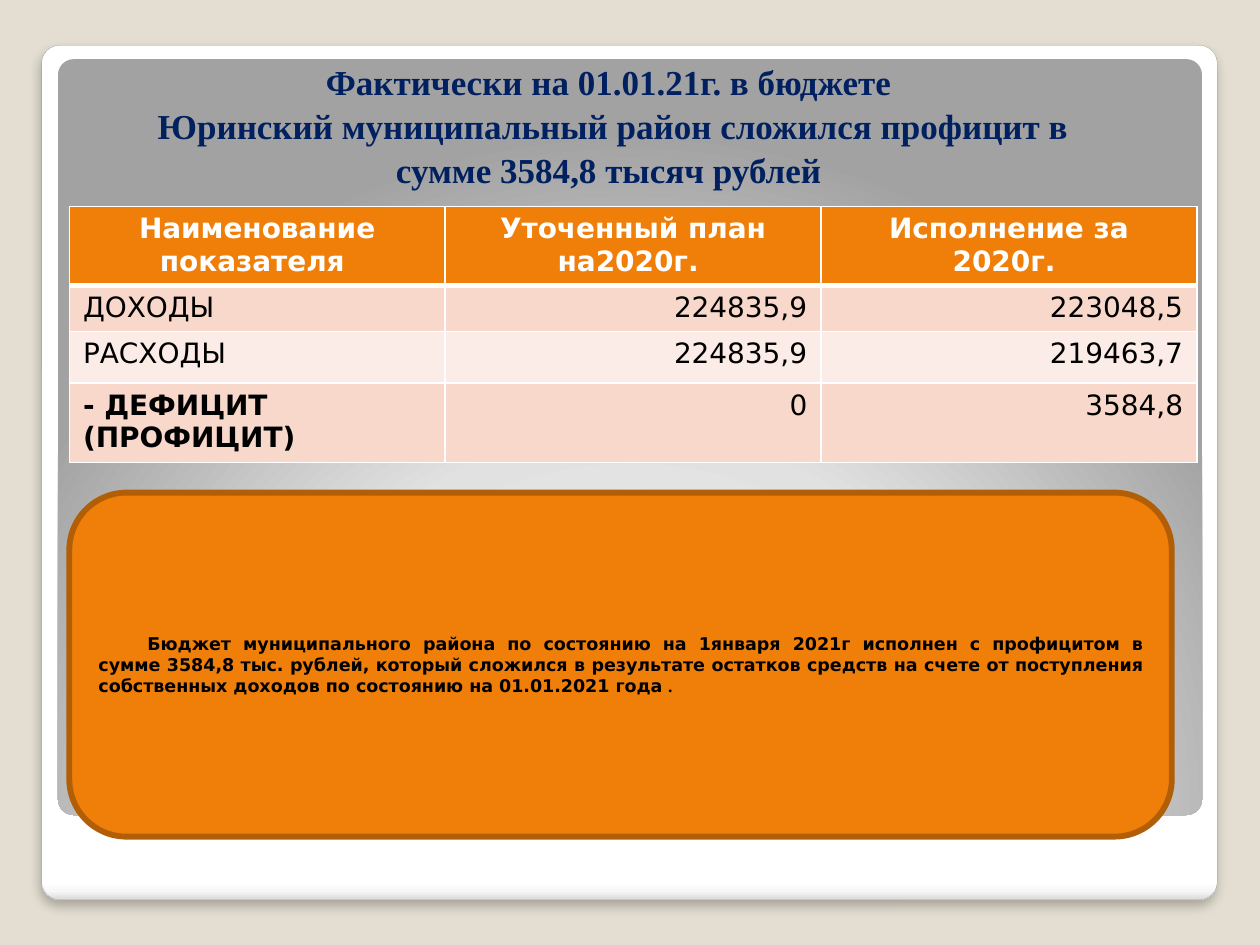
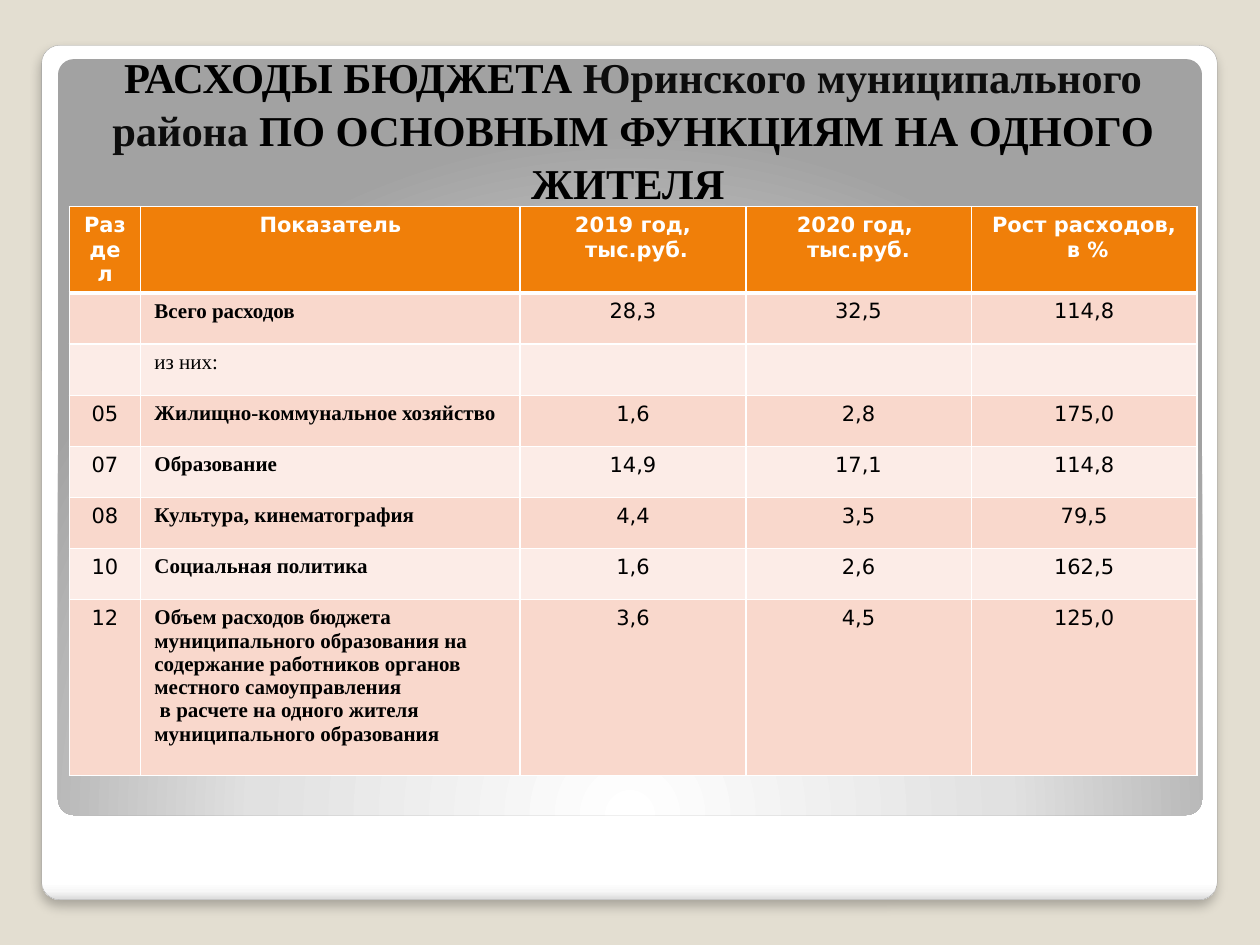
from lxml import etree
from pptx import Presentation
from pptx import util as u
from pptx.dml.color import RGBColor
from pptx.enum import shapes, text
from pptx.oxml import parse_xml
from pptx.oxml.ns import qn

Pt = u.Pt
NS = 'xmlns:a="http://schemas.openxmlformats.org/drawingml/2006/main"'
SERIF, SANS = "Times New Roman", "DejaVu Sans"
LEFT, CENTER, RIGHT = text.PP_ALIGN.LEFT, text.PP_ALIGN.CENTER, text.PP_ALIGN.RIGHT
COLORS = {
    "backdrop": "E3DED1", "white": "FFFFFF", "card_edge": "A4A4A4",
    "orange": "F07F09", "orange_edge": "B25E07", "band_dark": "F9D8CC",
    "band_light": "FCECE7", "navy": "002060", "black": "000000", "soft_black": "0D0D0D",
}
TABLE_LEFT, TABLE_TOP = 39.6, 118.1


def rgb(name):
    return RGBColor.from_string(COLORS[name])


def write(frame, paragraphs, font=SANS, size=12, color="black", bold=False,
          align=LEFT, spacing=None, anchor=None):
    """Fill a frame; a paragraph is a string or a list of (text, own format) spans."""
    frame.word_wrap = True
    if anchor is not None:
        frame.vertical_anchor = anchor
    for index, spans in enumerate(paragraphs):
        para = frame.add_paragraph() if index else frame.paragraphs[0]
        para.alignment = align
        if spacing:
            para.line_spacing = spacing
        for words, own in [(spans, {})] if isinstance(spans, str) else spans:
            for number, piece in enumerate(words.split("\n")):
                if number:
                    para.add_line_break()
                span = para.add_run()
                span.text = piece
                span.font.name = own.get("font", font)
                span.font.size = Pt(size)
                span.font.bold = bold
                span.font.color.rgb = rgb(own.get("color", color))


deck = Presentation()
deck.slide_width, deck.slide_height = Pt(720), Pt(540)
title_only = deck.slide_layouts[5]
pages = [deck.slides.add_slide(title_only) for _ in range(2)]

# Shared backdrop: a white card with a grey panel, moved to the slide master
master = deck.slide_master
master.background.fill.solid()
master.background.fill.fore_color.rgb = rgb("backdrop")
backdrop = [
    ((23.8, 25.9, 671.8, 488.2),
     [(0, "FFFFFF"), (98, "FFFFFF"), (99, "F7F7F7"), (100, "DADADA")],
     '<a:lin ang="5400000" scaled="0"/>'),
    ((33.1, 33.8, 653.8, 432),
     [(0, "FFFFFF"), (55, "E1E1E1"), (100, "A2A2A2")],
     '<a:path path="circle"><a:fillToRect l="50000" t="175000" r="50000" b="-75000"/></a:path>'),
]
for layer, (place, stops, direction) in enumerate(backdrop):
    panel = pages[0].shapes.add_shape(
        shapes.MSO_SHAPE.ROUNDED_RECTANGLE, *map(Pt, place))
    panel.adjustments[0] = 0.021
    panel.shadow.inherit = False
    panel.line.fill.background()
    stop_xml = "".join(f'<a:gs pos="{at * 1000}"><a:srgbClr val="{shade}"/></a:gs>'
                       for at, shade in stops)
    geometry = panel.element.spPr.find(qn("a:prstGeom"))
    geometry.addnext(parse_xml(
        f'<a:gradFill {NS} rotWithShape="1"><a:gsLst>{stop_xml}</a:gsLst>{direction}</a:gradFill>'))
    if layer == 0:
        panel.line.color.rgb = rgb("card_edge")
        panel.line.width = Pt(0.16)
        panel.element.spPr.find(qn("a:effectLst")).append(parse_xml(
            f'<a:outerShdw {NS} blurRad="{Pt(6)}" dist="{Pt(4)}" dir="5400000" rotWithShape="0">'
            '<a:srgbClr val="000000"><a:alpha val="25000"/></a:srgbClr></a:outerShdw>'))
    master.shapes.element.insert(2 + layer, panel.element)

# Titles
titles = [
    ((56.2, 28.1, 588.2, 84.2), 20, "navy",
     "Фактически на 01.01.21г. в бюджете \nЮринский муниципальный район сложился "
     "профицит в сумме 3584,8 тысяч рублей "),
    ((39.6, 28.1, 644.4, 94.3), 24.3, "black",
     [("РАСХОДЫ БЮДЖЕТА ", {}),
      ("Юринского муниципального района", {"color": "soft_black"}),
      (" ПО ОСНОВНЫМ ФУНКЦИЯМ НА ОДНОГО ЖИТЕЛЯ ", {})]),
]
for page, (place, size, color, words) in zip(pages, titles):
    title = page.shapes.title
    title.left, title.top, title.width, title.height = map(Pt, place)
    title.text_frame.auto_size = text.MSO_AUTO_SIZE.NONE
    write(title.text_frame, [words], font=SERIF, size=size, color=color, bold=True,
          align=CENTER, spacing=1.04, anchor=text.MSO_ANCHOR.BOTTOM)

# Tables: the first row is the header, "\n" parts paragraphs inside a cell
balance = [
    ["Наименование показателя ", "Уточенный план на2020г. ", "Исполнение за 2020г. "],
    ["ДОХОДЫ", "224835,9", "223048,5"],
    ["РАСХОДЫ", "224835,9", "219463,7"],
    ["- ДЕФИЦИТ\n(ПРОФИЦИТ)", "0", "3584,8"],
]
spending = [
    ["Раздел", "Показатель", "2019 год,\n тыс.руб.", "2020 год, \nтыс.руб.",
     "Рост расходов,\n в %"],
    ["", "Всего расходов", "28,3", "32,5", "114,8"],
    ["", "из них:", "", "", ""],
    ["05", "Жилищно-коммунальное хозяйство", "1,6", "2,8", "175,0"],
    ["07", "Образование", "14,9", "17,1", "114,8"],
    ["08", "Культура, кинематография", "4,4", "3,5", "79,5"],
    ["10", "Социальная политика", "1,6", "2,6", "162,5"],
    ["12", "Объем расходов бюджета муниципального образования на содержание работников "
     "органов местного самоуправления\n в расчете на одного жителя муниципального "
     "образования", "3,6", "4,5", "125,0"],
]
tables = [
    (balance, [214.8] * 3, [45.1, 26.3, 29.5, 45.3], 16,
     [LEFT, RIGHT, RIGHT], [SANS] * 3),
    (spending, [40.8, 216.9] + [128.9] * 3, [49.1] + [29.2] * 6 + [100.5], 12,
     [CENTER, LEFT, CENTER, CENTER, CENTER], [SANS, SERIF, SANS, SANS, SANS]),
]
bold_cells = {"- ДЕФИЦИТ\n(ПРОФИЦИТ)"} | {
    row[1] for row in spending if row[1] != "из них:"}
for page, (rows, widths, heights, size, aligns, fonts) in zip(pages, tables):
    table = page.shapes.add_table(
        len(rows), len(widths), Pt(TABLE_LEFT), Pt(TABLE_TOP),
        Pt(sum(widths)), Pt(sum(heights))).table
    for column, width in zip(table.columns, widths):
        column.width = Pt(width)
    for r, (row, height) in enumerate(zip(rows, heights)):
        table.rows[r].height = Pt(height)
        header = r == 0
        fill = "orange" if header else ("band_dark" if r % 2 else "band_light")
        for c, words in enumerate(row):
            cell = table.cell(r, c)
            cell.margin_left = cell.margin_right = Pt(7.9)
            cell.fill.solid()
            cell.fill.fore_color.rgb = rgb(fill)
            if words:
                write(cell.text_frame, words.split("\n"), size=size,
                      font=SANS if header else fonts[c],
                      color="white" if header else "black",
                      bold=header or words in bold_cells,
                      align=CENTER if header else aligns[c])
            properties = cell._tc.get_or_add_tcPr()
            for position, side in enumerate("LRTB"):
                thick = (header and side == "B") or (r == 1 and side == "T")
                border = etree.Element(qn(f"a:ln{side}"), w=str(Pt(3 if thick else 1)))
                solid = etree.SubElement(border, qn("a:solidFill"))
                etree.SubElement(solid, qn("a:srgbClr"), val=COLORS["white"])
                properties.insert(position, border)

# Conclusion under the balance table
note = pages[0].shapes.add_shape(
    shapes.MSO_SHAPE.ROUNDED_RECTANGLE, Pt(39.6), Pt(281.5), Pt(630), Pt(196.6))
note.shadow.inherit = False
note.fill.solid()
note.fill.fore_color.rgb = rgb("orange")
note.line.color.rgb = rgb("orange_edge")
note.line.width = Pt(3.35)
write(note.text_frame, [[
    ("Бюджет муниципального района по состоянию на 1января 2021г исполнен с профицитом "
     "в сумме 3584,8 тыс. рублей, который сложился в результате остатков средств на счете "
     "от поступления собственных доходов по состоянию на 01.01.2021 года ", {}),
    (".", {"font": SERIF})]],
    size=10, bold=True, align=text.PP_ALIGN.JUSTIFY, anchor=text.MSO_ANCHOR.MIDDLE)
note.text_frame.paragraphs[0]._p.get_or_add_pPr().set("indent", str(Pt(28)))

deck.save("out.pptx")
